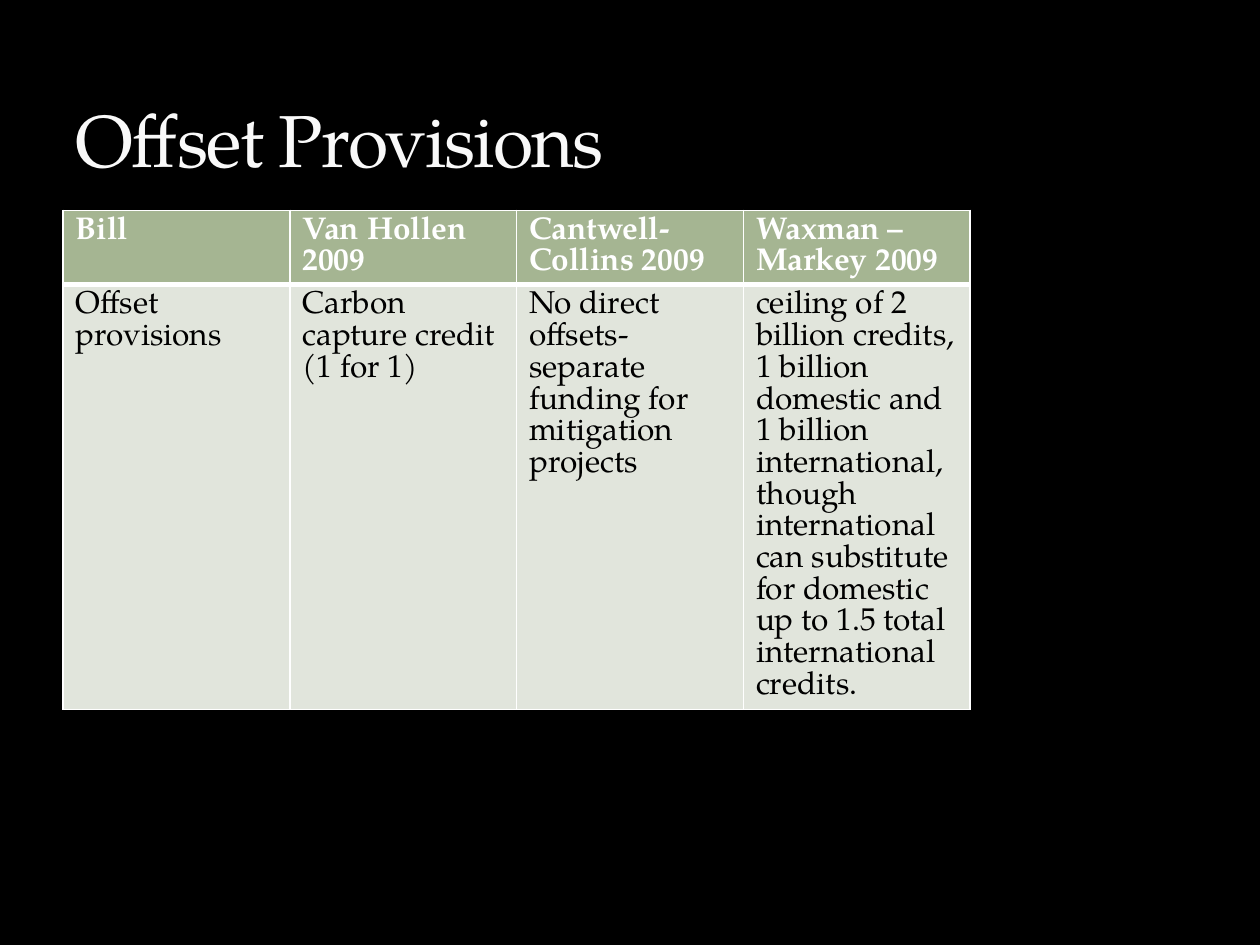
import pptx
import pptx.dml.color
import pptx.enum.text
import pptx.oxml
import pptx.oxml.ns
import pptx.util
from pptx.util import Inches

FONT = "TeX Gyre Pagella"
COLORS = {
    "background": "000000",
    "title": "F9F9F9",
    "title_outline": "3C4422",
    "header_fill": "A5B592",
    "header_text": "FFFFFF",
    "body_fill": "E1E5DC",
    "body_text": "000000",
    "border": "FFFFFF",
}
HEADERS = [["Bill"], ["Van Hollen", "2009"], ["Cantwell-Collins 2009"], ["Waxman –Markey 2009"]]
PROVISIONS = [
    ["Offset provisions"],
    ["Carbon capture credit (1 for 1)"],
    ["No direct offsets-separate funding for mitigation projects"],
    ["ceiling of 2 billion credits, 1 billion domestic and 1 billion international, "
     "though international can substitute for domestic up to 1.5 total international credits."],
]


def rgb(name):
    """Return the named colour."""
    return pptx.dml.color.RGBColor.from_string(COLORS[name])


def add_run(paragraph, text, size, color, bold=False):
    """Add one formatted run to a paragraph."""
    run = paragraph.add_run()
    run.text = text
    run.font.name = FONT
    run.font.size = pptx.util.Pt(size)
    run.font.bold = bold
    run.font.color.rgb = rgb(color)
    return run


def line_xml(tag, width, color, alpha=100):
    """Return a solid line element with its width in points."""
    return pptx.oxml.parse_xml(
        f'<a:{tag} {pptx.oxml.ns.nsdecls("a")} w="{int(pptx.util.Pt(width))}"><a:solidFill>'
        f'<a:srgbClr val="{COLORS[color]}"><a:alpha val="{alpha * 1000}"/></a:srgbClr>'
        f'</a:solidFill><a:prstDash val="solid"/></a:{tag}>'
    )


def place_title(slide, left, top, width, height):
    """Move the title placeholder into its box and fill it."""
    title = slide.shapes.title
    title.left, title.top, title.width, title.height = left, top, width, height
    frame = title.text_frame
    frame.word_wrap = True
    frame.auto_size = pptx.enum.text.MSO_AUTO_SIZE.NONE
    frame.vertical_anchor = pptx.enum.text.MSO_ANCHOR.BOTTOM
    paragraph = frame.paragraphs[0]
    paragraph.alignment = pptx.enum.text.PP_ALIGN.LEFT
    run = add_run(paragraph, "Offset Provisions", 42, "title")
    properties = run.font._element
    properties.set("spc", "-100")
    properties.insert(0, line_xml("ln", 0.25, "title_outline", alpha=25))


def fill_cell(cell, lines, kind, bottom_width):
    """Write a cell's paragraphs and set its fill and borders."""
    frame = cell.text_frame
    for index, line in enumerate(lines):
        paragraph = frame.add_paragraph() if index else frame.paragraphs[0]
        add_run(paragraph, line, 18, f"{kind}_text", bold=kind == "header")
    cell.fill.solid()
    cell.fill.fore_color.rgb = rgb(f"{kind}_fill")
    properties = cell._tc.get_or_add_tcPr()
    widths = {"lnL": 1, "lnR": 1, "lnT": 1, "lnB": bottom_width}
    for position, (tag, width) in enumerate(widths.items()):
        properties.insert(position, line_xml(tag, width, "border"))


def place_table(slide, left, top, width, row_heights):
    """Add the table of bills with equal columns."""
    shape = slide.shapes.add_table(2, len(HEADERS), left, top, width, sum(row_heights))
    table = shape.table
    for column in table.columns:
        column.width = width // len(HEADERS)
    for row, height in zip(table.rows, row_heights):
        row.height = height
    for index, (header, provision) in enumerate(zip(HEADERS, PROVISIONS)):
        fill_cell(table.cell(0, index), header, "header", 3)
        fill_cell(table.cell(1, index), provision, "body", 1)


def main():
    """Build and save the slide."""
    presentation = pptx.Presentation()
    presentation.slide_width = Inches(10)
    presentation.slide_height = Inches(7.5)
    slide = presentation.slides.add_slide(presentation.slide_layouts.get_by_name("Title Only"))
    slide.background.fill.solid()
    slide.background.fill.fore_color.rgb = rgb("background")
    place_table(slide, Inches(0.5), Inches(1.67), Inches(7.2), [Inches(0.59), Inches(3.37)])
    place_title(slide, Inches(0.5), Inches(0.17), Inches(9), Inches(1.33))
    presentation.save("out.pptx")


if __name__ == "__main__":
    main()
